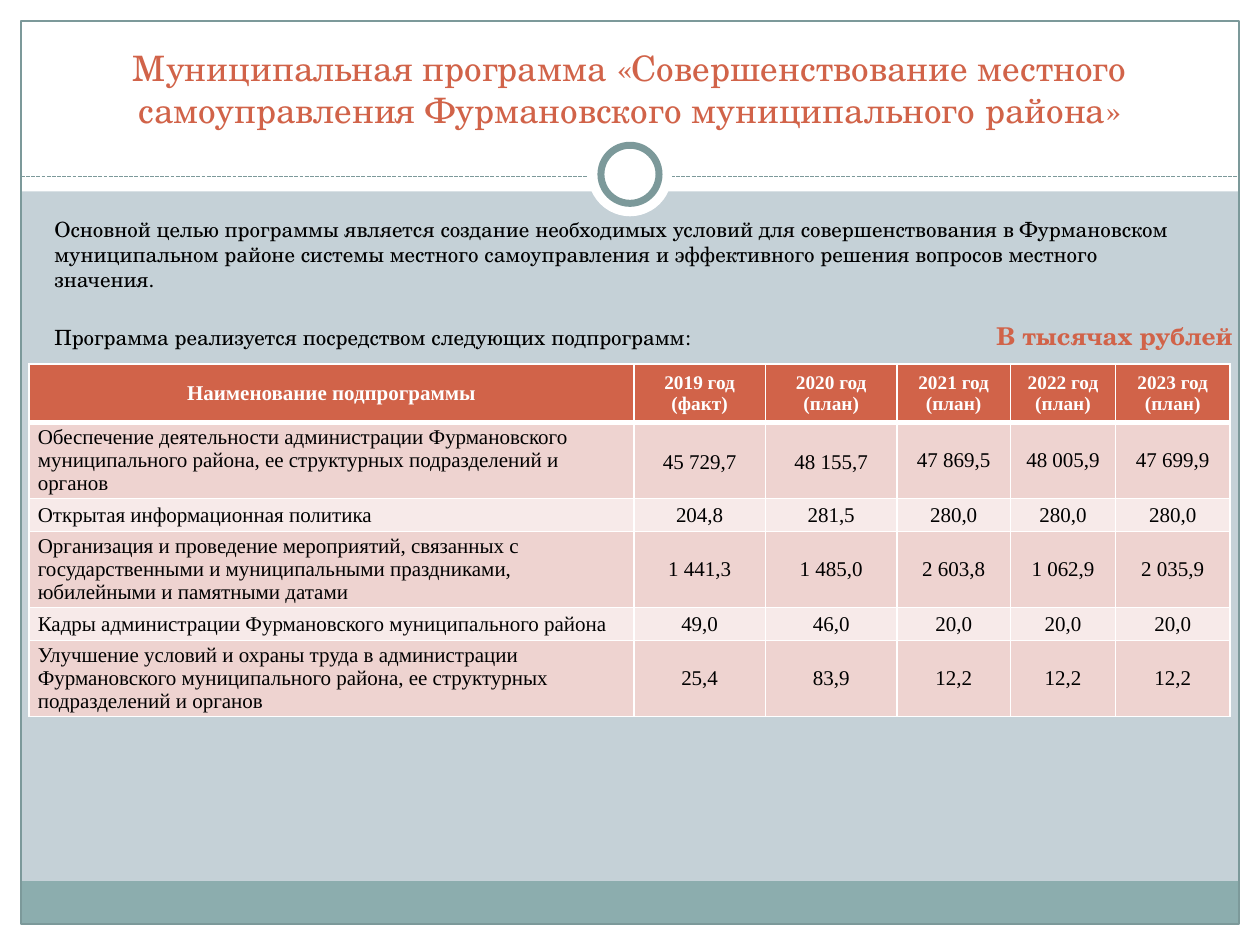
from lxml.etree import SubElement
from pptx import Presentation
from pptx.dml.color import RGBColor as Rgb
from pptx.enum.dml import MSO_LINE as Dash
from pptx.enum.shapes import MSO_CONNECTOR as Link, MSO_SHAPE as Kind
from pptx.enum.text import MSO_ANCHOR as Anchor, PP_ALIGN as Align
from pptx.oxml.ns import qn
from pptx.util import Pt

COLORS = {
    "back": "C5D1D7", "white": "FFFFFF", "band": "8CADAE", "frame": "7C999A",
    "accent": "D16349", "black": "000000", "odd": "EED3D0", "even": "F7EAE9",
}
SCHOOL, TIMES = "TeX Gyre Schola", "Times New Roman"
TITLE = ("Муниципальная программа «Совершенствование местного "
         "самоуправления Фурмановского муниципального района»")
GOAL = [
    "Основной целью программы является создание необходимых условий для "
    "совершенствования в Фурмановском муниципальном районе системы местного "
    "самоуправления и эффективного решения вопросов местного значения.",
    "Программа реализуется посредством следующих подпрограмм:",
]
UNITS = "В тысячах рублей"
HEAD = ["Наименование подпрограммы", "2019 год\n(факт)"] + [
    f"{year} год\n(план)" for year in range(2020, 2024)]
ROWS = [
    ["Обеспечение деятельности администрации Фурмановского муниципального "
     "района, ее структурных подразделений и органов",
     "45 729,7", "48 155,7", "47 869,5", "48 005,9", "47 699,9"],
    ["Открытая информационная политика",
     "204,8", "281,5", "280,0", "280,0", "280,0"],
    ["Организация и проведение мероприятий, связанных с государственными и "
     "муниципальными праздниками, юбилейными и памятными датами",
     "1 441,3", "1 485,0", "2 603,8", "1 062,9", "2 035,9"],
    ["Кадры администрации Фурмановского муниципального района",
     "49,0", "46,0", "20,0", "20,0", "20,0"],
    ["Улучшение условий и охраны труда в администрации Фурмановского "
     "муниципального района, ее структурных подразделений и органов",
     "25,4", "83,9", "12,2", "12,2", "12,2"],
]
WIDTHS = [345.6, 75.2, 75.2, 64.8, 60.2, 65.2]
HEIGHTS = [33.5, 29.5, 19.1, 29.5, 19.1, 29.5]


def color(name):
    return Rgb.from_string(COLORS[name])


def shape(slide, box, fill=None, line=None, width=0.75, kind=Kind.RECTANGLE):
    item = slide.shapes.add_shape(kind, *map(Pt, box))
    item.shadow.inherit = False
    if fill:
        item.fill.solid()
        item.fill.fore_color.rgb = color(fill)
    else:
        item.fill.background()
    if line:
        item.line.color.rgb = color(line)
        item.line.width = Pt(width)
    else:
        item.line.fill.background()


def write(frame, lines, size, tint, font=SCHOOL, bold=False, align=Align.LEFT, gap=0):
    """Fill a text frame, with gap points between its paragraphs."""
    frame.word_wrap = True
    for i, line in enumerate(lines):
        para = frame.add_paragraph() if i else frame.paragraphs[0]
        para.text = line
        para.alignment = align
        para.space_before = Pt(gap if i else 0)
        para.font.size, para.font.name, para.font.bold = Pt(size), font, bold
        para.font.color.rgb = color(tint)


def text(slide, box, lines, size, tint, anchor=Anchor.TOP, **style):
    frame = slide.shapes.add_textbox(*map(Pt, box)).text_frame
    write(frame, lines, size, tint, **style)
    frame.vertical_anchor = anchor


def backdrop(slide, box):
    """White margins and header, framed, with a band along the foot."""
    left, top, wide, high = box
    edge, head, foot = 12, 109.4, 24.5
    right, low = left + wide - edge, top + high - edge
    inner = wide - 2 * edge
    for part in ((left, low, wide, edge), (left, top, wide, head),
                 (left, top, edge, high), (right, top, edge, high)):
        shape(slide, part, "white")
    shape(slide, (left + edge, low - foot, inner, foot), "band")
    shape(slide, (left + edge, top + edge, inner, high - 2 * edge), line="frame")
    divider(slide, (left + edge, top + 75.6, inner, 48))


def divider(slide, box):
    """Dashed line with a ring at its middle."""
    left, top, wide, high = box
    mid = top + high / 2 + 1.2
    rule = slide.shapes.add_connector(
        Link.STRAIGHT, Pt(left), Pt(mid), Pt(left + wide), Pt(mid))
    rule.line.color.rgb = color("frame")
    rule.line.width = Pt(0.75)
    rule.line.dash_style = Dash.SQUARE_DOT
    SubElement(rule._element.spPr, qn("a:effectLst"))
    for size, line in ((high, None), (33.2, "frame")):
        spot = (left + (wide - size) / 2, top + (high - size) / 2, size, size)
        shape(slide, spot, "white", line, 4, Kind.OVAL)


def border(cell, sides):
    for side, width in sides.items():
        line = SubElement(cell._tc.get_or_add_tcPr(), qn(f"a:ln{side}"),
                          w=str(Pt(width)))
        fill = SubElement(line, qn("a:solidFill"))
        SubElement(fill, qn("a:srgbClr"), val=COLORS["white"])


def costs(slide, box):
    """Table of spending by subprogramme and year."""
    grid = slide.shapes.add_table(len(ROWS) + 1, len(HEAD), *map(Pt, box)).table
    for col, width in zip(grid.columns, WIDTHS):
        col.width = Pt(width)
    for row, height in zip(grid.rows, HEIGHTS):
        row.height = Pt(height)
    for r, row in enumerate([HEAD] + ROWS):
        for c, value in enumerate(row):
            cell = grid.cell(r, c)
            top, low = 3 if r == 1 else 1, 3 if r == 0 else 1
            border(cell, {"L": 1, "R": 1, "T": top, "B": low})
            cell.fill.solid()
            tint = "accent" if r == 0 else "odd" if r % 2 else "even"
            cell.fill.fore_color.rgb = color(tint)
            cell.margin_left = cell.margin_right = Pt(5)
            cell.margin_top = cell.margin_bottom = 0
            cell.vertical_anchor = Anchor.MIDDLE
            write(cell.text_frame, value.split("\n"),
                  11 if r == 0 and c else 12, "black" if r else "white", TIMES,
                  bold=r == 0, align=Align.LEFT if r and c == 0 else Align.CENTER)
    for c in (1, 2):
        grid.cell(1, c).text_frame.paragraphs[0].line_spacing = 1.15


def main():
    deck = Presentation()
    deck.slide_width, deck.slide_height = Pt(720), Pt(540)
    slide = deck.slides.add_slide(deck.slide_layouts[6])
    slide.background.fill.solid()
    slide.background.fill.fore_color.rgb = color("back")
    backdrop(slide, (0, 0, 720, 540))
    text(slide, (24, 18, 672, 60), [TITLE], 20, "accent",
         Anchor.BOTTOM, align=Align.CENTER)
    text(slide, (24, 120, 669.6, 48), GOAL, 12, "black", gap=18.5)
    costs(slide, (16.6, 208, sum(WIDTHS), sum(HEIGHTS)))
    text(slide, (562.3, 180, 163.4, 33.8), [UNITS], 14, "accent", bold=True)
    deck.save("out.pptx")


if __name__ == "__main__":
    main()
